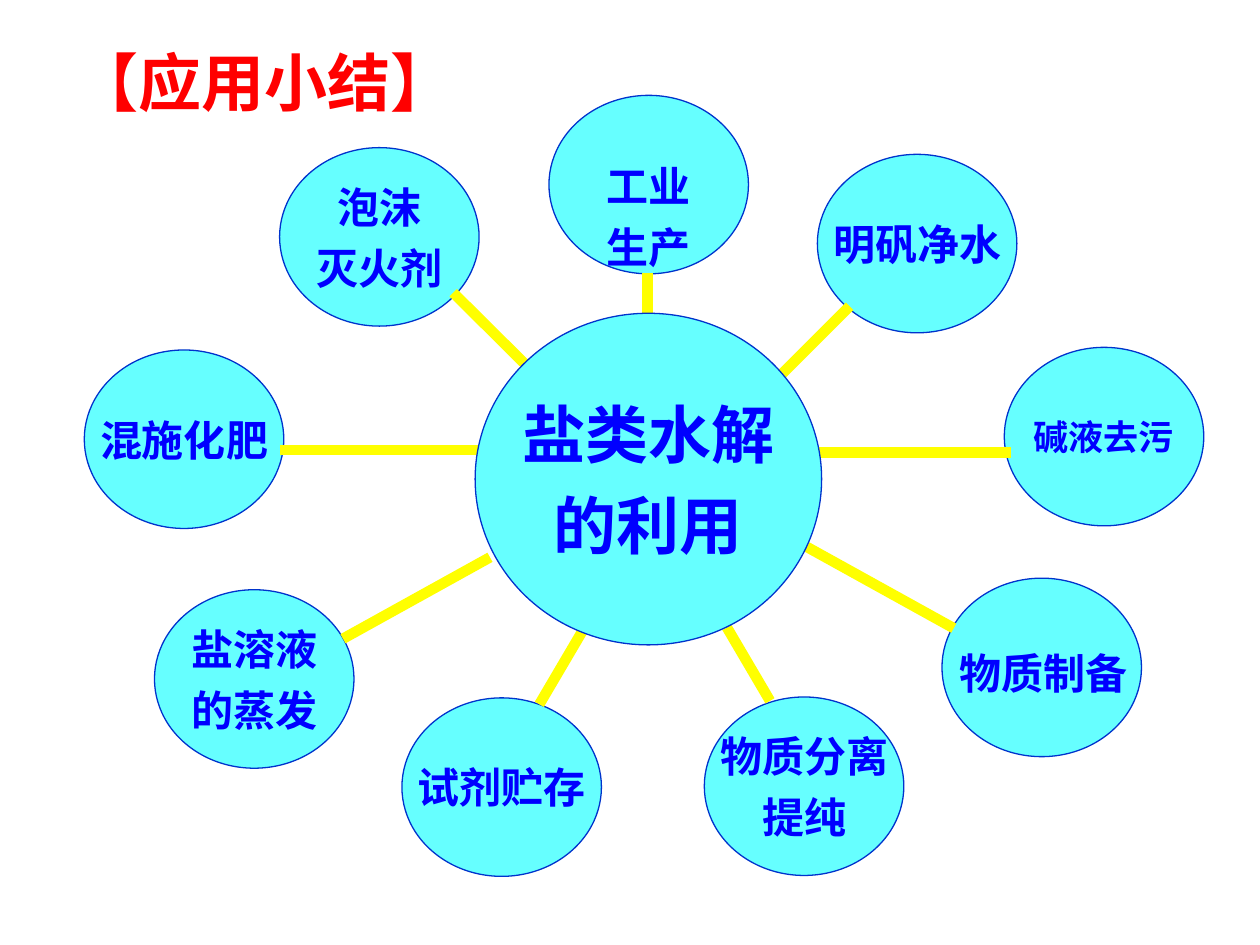
from lxml.etree import SubElement
from pptx import Presentation
from pptx.dml.color import RGBColor
from pptx.enum.shapes import MSO_CONNECTOR, MSO_SHAPE
from pptx.enum.text import MSO_ANCHOR, PP_ALIGN
from pptx.oxml.ns import qn
from pptx.util import Pt

RED = RGBColor(0xFF, 0x00, 0x00)
BLUE = RGBColor(0x00, 0x00, 0xFF)
OUTLINE = RGBColor(0x00, 0x33, 0xCC)
CYAN = RGBColor(0x66, 0xFF, 0xFF)
YELLOW = RGBColor(0xFF, 0xFF, 0x00)


def style(p, size, font, color):
    p.font.size = Pt(size)
    p.font.name = font
    p.font.bold = True
    p.font.color.rgb = color


def add_bubble(s, x, y, w, h, lines, size, font, top=3.6):
    sp = s.shapes.add_shape(MSO_SHAPE.OVAL, Pt(x), Pt(y), Pt(w), Pt(h))
    sp.shadow.inherit = False
    sp.fill.solid()
    sp.fill.fore_color.rgb = CYAN
    sp.line.color.rgb = OUTLINE
    sp.line.width = Pt(0.75)
    tf = sp.text_frame
    tf.word_wrap = False
    tf.vertical_anchor = MSO_ANCHOR.MIDDLE
    tf.margin_top = Pt(top)
    for i, line in enumerate(lines):
        p = tf.paragraphs[0] if i == 0 else tf.add_paragraph()
        p.text = line
        p.alignment = PP_ALIGN.CENTER
        p.space_before = Pt(size / 4 if i else 0)
        style(p, size, font, BLUE)


prs = Presentation()
prs.slide_width, prs.slide_height = Pt(720), Pt(540)
s = prs.slides.add_slide(prs.slide_layouts[5])

# Title
title = s.shapes.title
title.left, title.top, title.width, title.height = Pt(36), Pt(21.6), Pt(648), Pt(49.7)
tf = title.text_frame
tf.text = "【应用小结】"
tf.vertical_anchor = MSO_ANCHOR.MIDDLE
p = tf.paragraphs[0]
p.alignment = PP_ALIGN.LEFT
style(p, 36, "Noto Sans CJK SC", RED)

# Outer bubbles: left, top, lines, text size, font, top inset
SERIF, SANS = "Times New Roman", "Arial"
bubbles = [
    (48.2, 200, ["混施化肥"], 24, SERIF, 3.6),
    (159.8, 84.4, ["泡沫", "灭火剂"], 24, SERIF, 3.6),
    (313.7, 54.5, ["工业", "生产"], 24, SANS, 40),
    (467.1, 88.2, ["明矾净水"], 24, SERIF, 3.6),
    (573.9, 198.5, ["碱液去污"], 20, SERIF, 3.6),
    (538.3, 330.4, [], 24, SANS, 3.6),
    (402.5, 398.3, ["物质分离", "提纯"], 24, SANS, 3.6),
    (88.3, 337, ["盐溶液", "的蒸发"], 24, SERIF, 3.6),
    (229.7, 398.8, ["试剂贮存"], 24, SANS, 3.6),
]
for x, y, lines, size, font, top in bubbles:
    add_bubble(s, x, y, 114, 102, lines, size, font, top)

# Spokes
spokes = [
    (280, 318.5, 196, 365),
    (461, 312.5, 545, 359),
    (259, 167.3, 302, 210),
    (485.5, 175, 443.5, 217),
    (160, 257.2, 273.6, 257.2),
    (464, 258.5, 578, 258.5),
    (332.6, 361, 308.2, 402.5),
    (415.4, 358.6, 440, 400.5),
    (370, 156.2, 370, 180.7),
]
for x1, y1, x2, y2 in spokes:
    line = s.shapes.add_connector(MSO_CONNECTOR.STRAIGHT, Pt(x1), Pt(y1), Pt(x2), Pt(y2))
    line.line.color.rgb = YELLOW
    line.line.width = Pt(6)
    SubElement(line._element.spPr, qn("a:effectLst"))

# Hub
add_bubble(s, 271.5, 179, 198, 189.5, ["盐类水解", "的利用"], 36, SERIF)

# Label over the empty bubble
label = s.shapes.add_textbox(Pt(541.4), Pt(366.5), Pt(111), Pt(36))
tf = label.text_frame
tf.word_wrap = False
tf.text = "物质制备"
style(tf.paragraphs[0], 24, SANS, BLUE)

prs.save("out.pptx")
